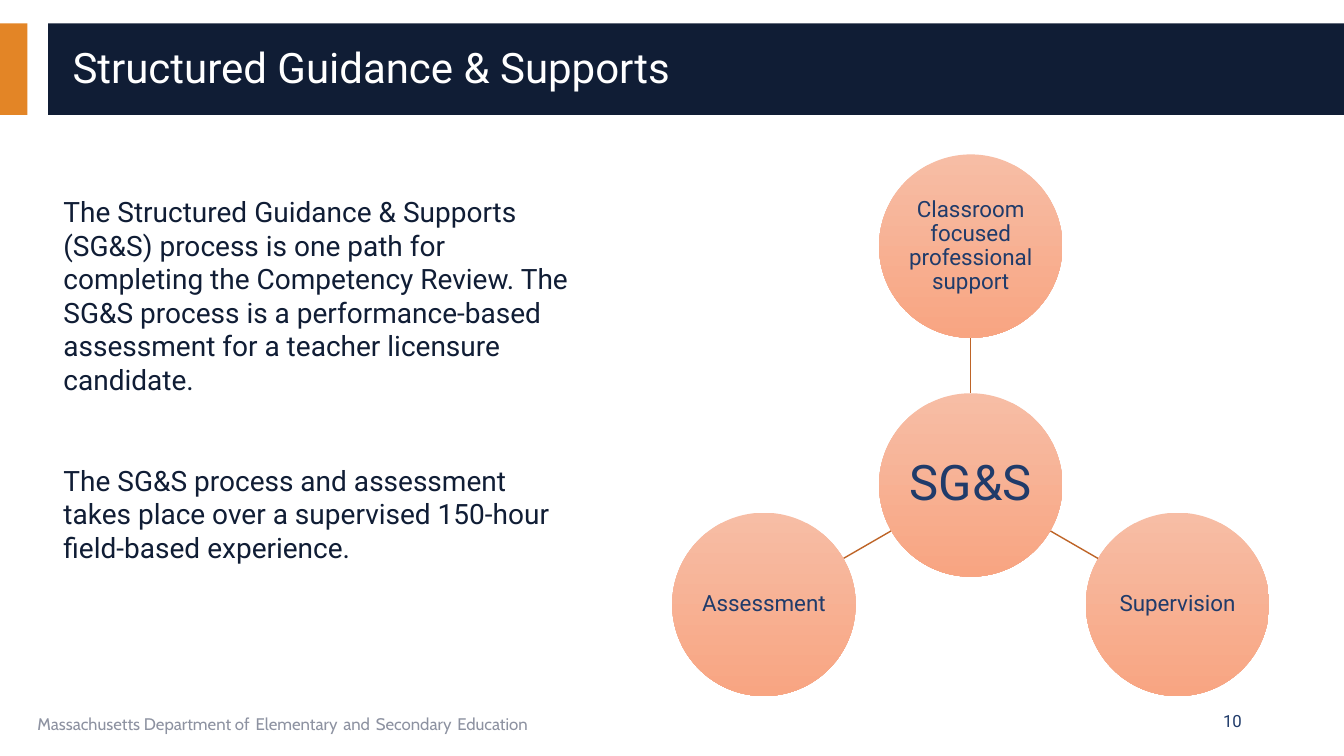
"""Build the Structured Guidance & Supports slide."""
from math import cos, radians, sin

from lxml import etree
from pptx import Presentation
from pptx.dml.color import RGBColor as Rgb
from pptx.enum.shapes import MSO_CONNECTOR as Line, MSO_SHAPE as Shape
from pptx.enum.text import MSO_ANCHOR as Anchor, MSO_AUTO_SIZE as Auto, PP_ALIGN as Align
from pptx.oxml.ns import qn
from pptx.util import Pt

HUES = {
    "navy": "101D35", "orange": "E38526", "blue": "203B6A", "gray": "8D92A1",
    "white": "FFFFFF", "peach": "F7BDA5", "coral": "F8A582", "rust": "BE6427",
}


def hue(name):
    return Rgb.from_string(HUES[name])


def style(para, size, color, face="Roboto"):
    for run in para.runs:
        run.font.size = Pt(size)
        run.font.name = face
        run.font.color.rgb = hue(color)


deck = Presentation()
deck.slide_width, deck.slide_height = Pt(960), Pt(540)
slide = deck.slides.add_slide(deck.slide_layouts[5])
shapes = slide.shapes

for left, width, color in ((0, 19.6, "orange"), (34.4, 925.6, "navy")):
    bar = shapes.add_shape(Shape.RECTANGLE, Pt(left), Pt(16.6), Pt(width), Pt(65.5))
    bar.shadow.inherit = False
    bar.fill.solid()
    bar.fill.fore_color.rgb = hue(color)
    bar.line.fill.background()

title = shapes.title
bar.element.addnext(title.element)
title.left, title.top, title.width, title.height = Pt(44.6), Pt(28), Pt(895.7), Pt(43.2)
frame = title.text_frame
frame.text = "Structured Guidance & Supports"
frame.auto_size = Auto.NONE
frame.vertical_anchor = Anchor.MIDDLE
para = frame.paragraphs[0]
para.alignment = Align.LEFT
para.line_spacing = 0.9
style(para, 30, "white")

body = shapes.add_textbox(Pt(38.2), Pt(135.4), Pt(383), Pt(344)).text_frame
body.word_wrap = True
body.text = (
    "The Structured Guidance & Supports (SG&S) process is one path for completing "
    "the Competency Review. The SG&S process is a performance-based assessment "
    "for a teacher licensure candidate."
)
para = body.add_paragraph()
para.text = (
    "The SG&S process and assessment takes place over a supervised 150-hour "
    "field-based experience."
)
para.space_before = Pt(48)
for para in body.paragraphs:
    style(para, 20, "navy")

mid_x, mid_y = 693.4, 346.4
reach, radius = 170.6, 65.5
nodes = [("SG&S", 35, mid_x, mid_y)]
spokes = (("Classroom focused professional support", -90), ("Supervision", 30), ("Assessment ", 150))
for text, angle in spokes:
    dx, dy = cos(radians(angle)), sin(radians(angle))
    near, far = radius, reach - radius
    link = shapes.add_connector(
        Line.STRAIGHT,
        Pt(mid_x + near * dx), Pt(mid_y + near * dy),
        Pt(mid_x + far * dx), Pt(mid_y + far * dy),
    )
    link.line.color.rgb = hue("rust")
    link.line.width = Pt(1)
    etree.SubElement(link.element.spPr, qn("a:effectLst"))
    nodes.append((text, 16, mid_x + reach * dx, mid_y + reach * dy))

for text, size, x, y in nodes:
    node = shapes.add_shape(
        Shape.OVAL, Pt(x - radius), Pt(y - radius), Pt(2 * radius), Pt(2 * radius)
    )
    node.shadow.inherit = False
    node.line.fill.background()
    node.fill.gradient()
    node.fill.gradient_angle = 270
    for stop, color in zip(node.fill.gradient_stops, ("peach", "coral")):
        stop.color.rgb = hue(color)
    frame = node.text_frame
    frame.text = text
    frame.word_wrap = True
    frame.vertical_anchor = Anchor.MIDDLE
    frame.margin_left = frame.margin_right = Pt(0.8)
    frame.margin_top = frame.margin_bottom = Pt(0.8)
    para = frame.paragraphs[0]
    para.alignment = Align.CENTER
    para.line_spacing = 0.9
    style(para, size, "blue")

foot = shapes.add_textbox(Pt(19.6), Pt(500.5), Pt(607.7), Pt(28.8)).text_frame
foot.word_wrap = True
foot.vertical_anchor = Anchor.MIDDLE
para = foot.paragraphs[0]
for text in ("Massachusetts Department of", " ", "Elementary", " ", "and", " ", "Secondary", " ", "Education"):
    para.add_run().text = text
style(para, 12, "gray", "Cabin")
for gap in para.runs[1::2]:
    gap.font.size = Pt(18)

page = shapes.add_textbox(Pt(678.2), Pt(500.5), Pt(216), Pt(28.8)).text_frame
page.word_wrap = True
page.vertical_anchor = Anchor.MIDDLE
page.text = "10"
para = page.paragraphs[0]
para.alignment = Align.RIGHT
style(para, 12, "blue")

deck.save("out.pptx")
